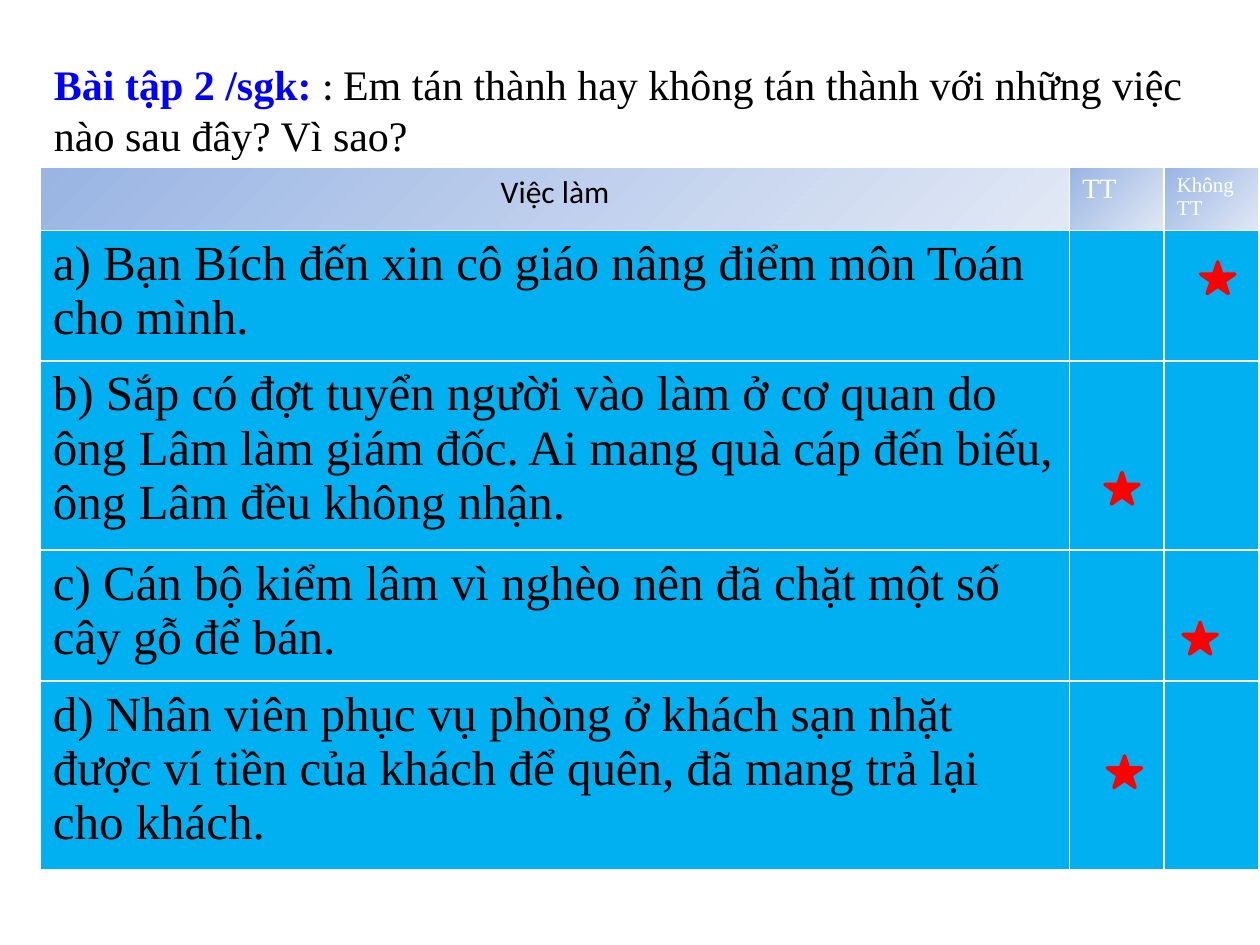
from lxml.etree import SubElement
from pptx import Presentation
from pptx.dml.color import RGBColor
from pptx.enum.shapes import MSO_SHAPE
from pptx.enum.text import MSO_ANCHOR, PP_ALIGN
from pptx.oxml.ns import qn
from pptx.util import Inches, Pt

BLUE = RGBColor(0, 0, 255)
BLACK = RGBColor(0, 0, 0)
WHITE = RGBColor(255, 255, 255)
RED = RGBColor(255, 0, 0)
SKY = RGBColor(0, 176, 240)
FADE = RGBColor(0x9A, 0xB5, 0xE4), RGBColor(0xE1, 0xE8, 0xF5)
SERIF, SANS = "Times New Roman", "Calibri"

TITLE = [
    ("Bài tập 2 /sgk: ", dict(name=SERIF, size=Pt(24), bold=True), BLUE),
    (": ", dict(name=SANS, size=Pt(24), bold=False), BLACK),
    ("Em tán thành hay không tán thành với những việc nào sau đây? Vì sao?",
     dict(name=SERIF, size=Pt(24), bold=False), BLACK),
]
HEADS = [
    (["Việc làm"], SANS, 18, BLACK, PP_ALIGN.CENTER),
    (["TT"], SERIF, 16, WHITE, PP_ALIGN.LEFT),
    (["Không", "TT"], SERIF, 12, WHITE, PP_ALIGN.LEFT),
]
TASKS = [
    "a) Bạn Bích đến xin cô giáo nâng điểm môn Toán cho mình.",
    "b) Sắp có đợt tuyển người vào làm ở cơ quan do ông Lâm làm giám đốc. "
    "Ai mang quà cáp đến biếu, ông Lâm đều không nhận.",
    "c) Cán bộ kiểm lâm vì nghèo nên đã chặt một số cây gỗ để bán.",
    "d) Nhân viên phục vụ phòng ở khách sạn nhặt được ví tiền của khách "
    "để quên, đã mang trả lại cho khách.",
]
STARS = [(9.53, 2.08), (8.77, 3.75), (9.39, 4.94), (8.79, 6)]
COLS = [8.17, 0.75, 0.75]
ROWS = [0.5, 1.03, 1.5, 1.04, 1.5]


def write(para, text, font, color):
    run = para.add_run()
    run.text = text
    for key, value in font.items():
        setattr(run.font, key, value)
    run.font.color.rgb = color


def edge(cell):
    props = cell._tc.get_or_add_tcPr()
    for side in "LRTB":
        line = SubElement(props, qn("a:ln" + side), w=str(Pt(1)))
        fill = SubElement(line, qn("a:solidFill"))
        SubElement(fill, qn("a:srgbClr"), val=str(WHITE))


def fill_cell(cell, lines, name, size, color, align):
    frame = cell.text_frame
    for n, text in enumerate(lines):
        para = frame.add_paragraph() if n else frame.paragraphs[0]
        para.alignment = align
        write(para, text, dict(name=name, size=Pt(size), bold=False), color)


def main():
    deck = Presentation()
    deck.slide_width, deck.slide_height = Inches(10), Inches(7.5)
    slide = deck.slides.add_slide(deck.slide_layouts[6])
    shapes = slide.shapes

    box = shapes.add_textbox(*map(Inches, (0.33, 0.41, 9.67, 0.91)))
    frame = box.text_frame
    frame.word_wrap = True
    frame.vertical_anchor = MSO_ANCHOR.MIDDLE
    for text, font, color in TITLE:
        write(frame.paragraphs[0], text, font, color)

    area = map(Inches, (0.32, 1.33, sum(COLS), sum(ROWS)))
    table = shapes.add_table(len(ROWS), len(COLS), *area).table
    for col, width in zip(table.columns, COLS):
        col.width = Inches(width)
    for row, height in zip(table.rows, ROWS):
        row.height = Inches(height)
    for cell in table.iter_cells():
        edge(cell)
        cell.fill.solid()
        cell.fill.fore_color.rgb = SKY
    for c, head in enumerate(HEADS):
        cell = table.cell(0, c)
        fill_cell(cell, *head)
        cell.fill.gradient()
        cell.fill.gradient_angle = 315
        for stop, color in zip(cell.fill.gradient_stops, FADE):
            stop.color.rgb = color
    for r, task in enumerate(TASKS, 1):
        fill_cell(table.cell(r, 0), [task], SERIF, 28, BLACK, PP_ALIGN.LEFT)

    for left, top in STARS:
        spot = map(Inches, (left, top, 0.27, 0.25))
        star = shapes.add_shape(MSO_SHAPE.STAR_5_POINT, *spot)
        star.shadow.inherit = False
        star.fill.solid()
        star.fill.fore_color.rgb = RED
        star.line.color.rgb = RED
        star.line.width = Pt(2)

    deck.save("out.pptx")


if __name__ == "__main__":
    main()
